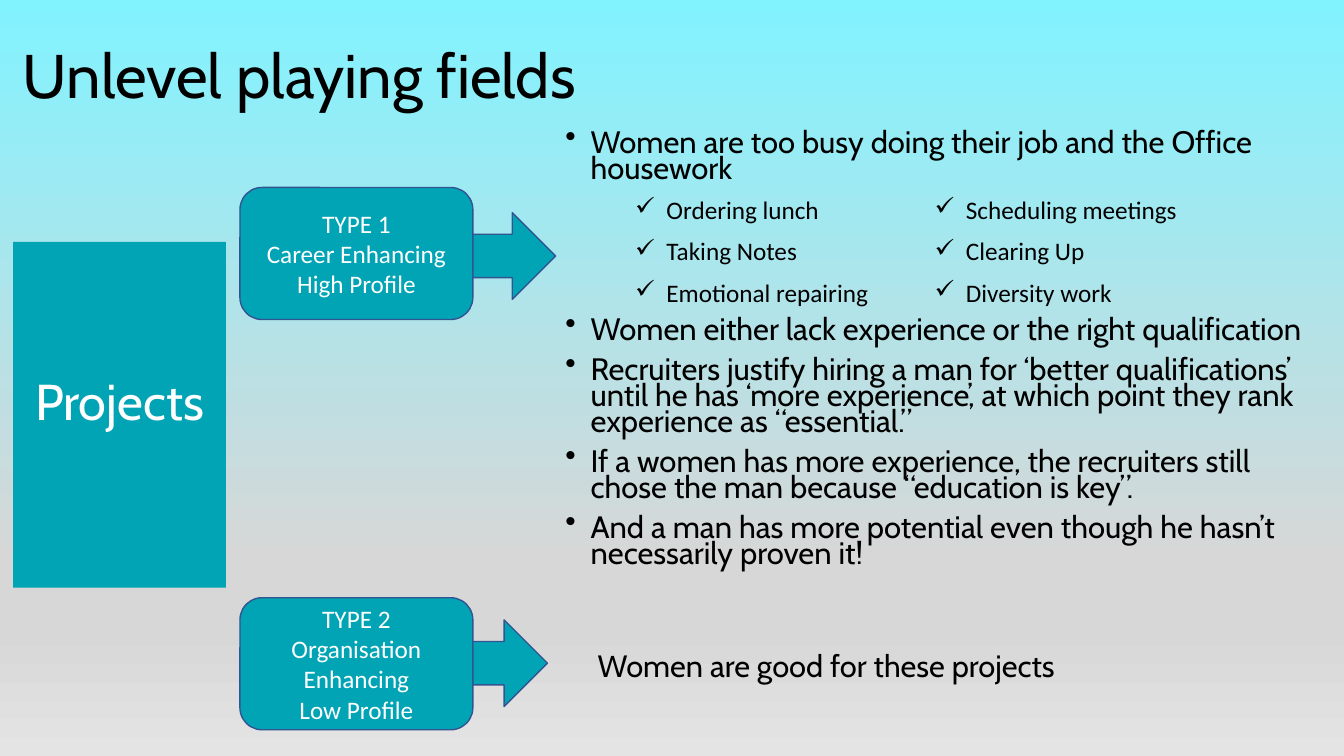
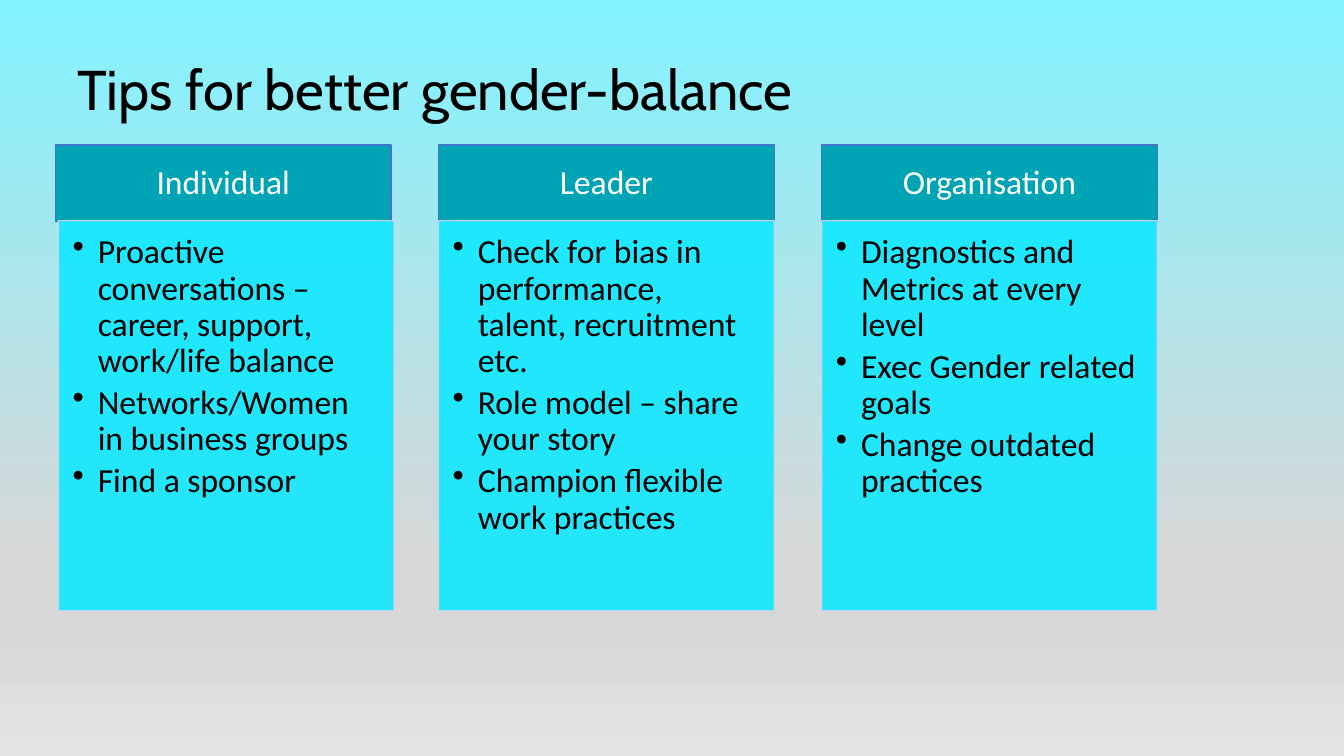
from lxml import etree
from pptx import Presentation
from pptx.dml.color import RGBColor
from pptx.enum.shapes import MSO_SHAPE
from pptx.enum.text import MSO_ANCHOR, PP_ALIGN
from pptx.oxml.ns import qn
from pptx.util import Inches, Pt

RECT = MSO_SHAPE.RECTANGLE
ROUND = MSO_SHAPE.ROUNDED_RECTANGLE
ARROW = MSO_SHAPE.RIGHT_ARROW
TOP, MIDDLE = MSO_ANCHOR.TOP, MSO_ANCHOR.MIDDLE
LEFT, CENTER = PP_ALIGN.LEFT, PP_ALIGN.CENTER

COLORS = {
    "teal": "00A4B5", "cyan": "11E8FF", "navy": "325491", "blue": "4472C4",
    "pale": "CFD5EA", "white": "FFFFFF", "black": "000000",
}
BACKGROUND = [(0, "81F3FF"), (74, "D7D7D7"), (83, "D7D7D7"), (100, "E4E4E4")]
DISPLAY, BODY = "Cabin", "Calibri"
NO_GRID = "{2D5ABB26-0587-4C30-8999-92F81FD0307C}"
INSETS = (0.1, 0.05, 0.1, 0.05)


def rgb(name):
    return RGBColor.from_string(COLORS[name])


class Deck:
    def __init__(self):
        self.prs = Presentation()
        self.prs.slide_width, self.prs.slide_height = Inches(13.33), Inches(7.5)
        self.s = None
        self.background()

    def background(self):
        """Gradient shared by all slides through the master."""
        master = self.prs.slide_master
        fill = master.background.fill
        fill.gradient()
        fill.gradient_angle = 270
        stops = master.element.find(".//" + qn("p:bgPr")).find(".//" + qn("a:gsLst"))
        for stop in list(stops):
            stops.remove(stop)
        for pos, color in BACKGROUND:
            gs = etree.SubElement(stops, qn("a:gs"), pos=str(pos * 1000))
            etree.SubElement(gs, qn("a:srgbClr"), val=color)

    def slide(self):
        self.s = self.prs.slides.add_slide(self.prs.slide_layouts[6])

    def set_text(self, tf, lines, size, font=BODY, color="black", align=LEFT,
                 anchor=TOP, insets=INSETS, bullet=None, indent=0.25,
                 spacing=None, before=0, after=0):
        tf.word_wrap = True
        tf.vertical_anchor = anchor
        (tf.margin_left, tf.margin_top,
         tf.margin_right, tf.margin_bottom) = map(Inches, insets)
        tf.text = "\n".join(lines)
        for i, p in enumerate(tf.paragraphs):
            if bullet:
                pPr = p._p.get_or_add_pPr()
                pPr.set("marL", str(Inches(indent)))
                pPr.set("indent", str(-Inches(indent)))
                etree.SubElement(pPr, qn("a:buChar"), char=bullet)
            p.alignment = align
            if spacing:
                p.line_spacing = spacing
            p.space_before = Pt(before if i else 0)
            p.space_after = Pt(after)
            for r in p.runs:
                r.font.size, r.font.name = Pt(size), font
                r.font.color.rgb = rgb(color)

    def text(self, at, lines, size, **style):
        sp = self.s.shapes.add_textbox(*map(Inches, at))
        self.set_text(sp.text_frame, lines, size, **style)
        return sp.text_frame

    def title(self, at, text, size):
        self.text(at, [text], size, font=DISPLAY, anchor=MIDDLE, spacing=0.9)

    def shape(self, kind, at, fill="teal", line=None, alpha=None):
        sp = self.s.shapes.add_shape(kind, *map(Inches, at))
        sp.shadow.inherit = False
        sp.fill.solid()
        sp.fill.fore_color.rgb = rgb(fill)
        if line:
            sp.line.color.rgb = rgb(line)
            sp.line.width = Pt(1)
        else:
            sp.line.fill.background()
        if alpha:
            for clr in sp._element.spPr.iter(qn("a:srgbClr")):
                etree.SubElement(clr, qn("a:alpha"), val=str(alpha * 1000))
        return sp

    def box(self, kind, at, lines, size, line=None, **style):
        sp = self.shape(kind, at, line=line)
        self.set_text(sp.text_frame, lines, size, color="white", align=CENTER,
                      anchor=MIDDLE, **style)

    def project_type(self, top, arrow_left, arrow_top, lines):
        self.shape(ARROW, (arrow_left, arrow_top, 1.12, 0.86), line="navy")
        self.box(ROUND, (2.38, top, 2.31, 1.31), lines, 18, line="navy")

    def checklist(self, left, top, widths, row_height, rows):
        frame = self.s.shapes.add_table(
            len(rows), len(widths), Inches(left), Inches(top),
            Inches(sum(widths)), Inches(row_height * len(rows)))
        table = frame.table
        table.first_row = table.horz_banding = False
        table._tbl.tblPr.find(qn("a:tableStyleId")).text = NO_GRID
        for column, width in zip(table.columns, widths):
            column.width = Inches(width)
        for i, row in enumerate(rows):
            for j, item in enumerate(row):
                cell = table.cell(i, j)
                cell.fill.background()
                self.set_text(cell.text_frame, [item], 18, bullet="✓", indent=0.31)

    def tip_column(self, left, body_left, heading, tips):
        self.box(RECT, (left, 1.44, 3.33, 0.76), [heading], 24, line="blue",
                 insets=(0.19, 0.11, 0.19, 0.11), spacing=0.9)
        sp = self.shape(RECT, (body_left, 2.19, 3.33, 3.87), "cyan", "pale", alpha=90)
        self.set_text(sp.text_frame, tips, 24, insets=(0.14, 0.14, 0.19, 0.21),
                      bullet="•", spacing=0.9, after=4)


def main():
    deck = Deck()

    # Slide 1: project types
    deck.slide()
    deck.title((0.13, 0.29, 11.5, 0.98), "Unlevel playing fields", 44)
    tf = deck.text((5.51, 1.27, 7.53, 4.57), [
        "Women are too busy doing their job and the Office housework",
        "Women either lack experience or the right qualification",
        "Recruiters justify hiring a man for ‘better qualifications’ until he has "
        "‘more experience’, at which point they rank experience as “essential.”",
        "If a women has more experience, the recruiters still chose the man "
        "because “education is key”.",
        "And a man has more potential even though he hasn’t necessarily proven it!",
    ], 22.1, font=DISPLAY, bullet="•", spacing=0.7, before=10)
    # Room for the checklist under the first bullet
    tf.paragraphs[1].space_before = Pt(96)

    deck.box(RECT, (0.13, 2.4, 2.11, 3.43), ["Projects"], 36, font=DISPLAY,
             insets=(0.1, 0.05, 0.1, 0.34))
    deck.project_type(1.86, 4.39, 2.11, ["TYPE 1", "Career Enhancing", "High Profile"])
    deck.project_type(5.93, 4.31, 6.15, ["TYPE 2", "Organisation Enhancing", "Low Profile"])
    deck.checklist(6.2, 1.89, (2.97, 2.93), 0.41, [
        ("Ordering lunch", "Scheduling meetings"),
        ("Taking Notes", "Clearing Up"),
        ("Emotional repairing", "Diversity work"),
    ])
    deck.text((5.83, 6.37, 5.47, 0.77), ["Women are good for these projects"], 22,
              font=DISPLAY)

    # Slide 2: tips in three columns
    deck.slide()
    deck.title((0.67, 0.19, 11.62, 1.45), "Tips for better gender-balance", 40)
    columns = [
        (0.03, "Individual", [
            "Proactive conversations – career, support, work/life balance",
            "Networks/Women in business groups",
            "Find a sponsor"]),
        (0, "Leader", [
            "Check for bias in performance, talent, recruitment etc.",
            "Role model – share your story",
            "Champion flexible work practices"]),
        (0, "Organisation", [
            "Diagnostics and Metrics at every level",
            "Exec Gender related goals",
            "Change outdated practices"]),
    ]
    for i, (shift, heading, tips) in enumerate(columns):
        left = 0.55 + 3.8 * i
        deck.tip_column(left, left + shift, heading, tips)

    deck.prs.save("out.pptx")


if __name__ == "__main__":
    main()
